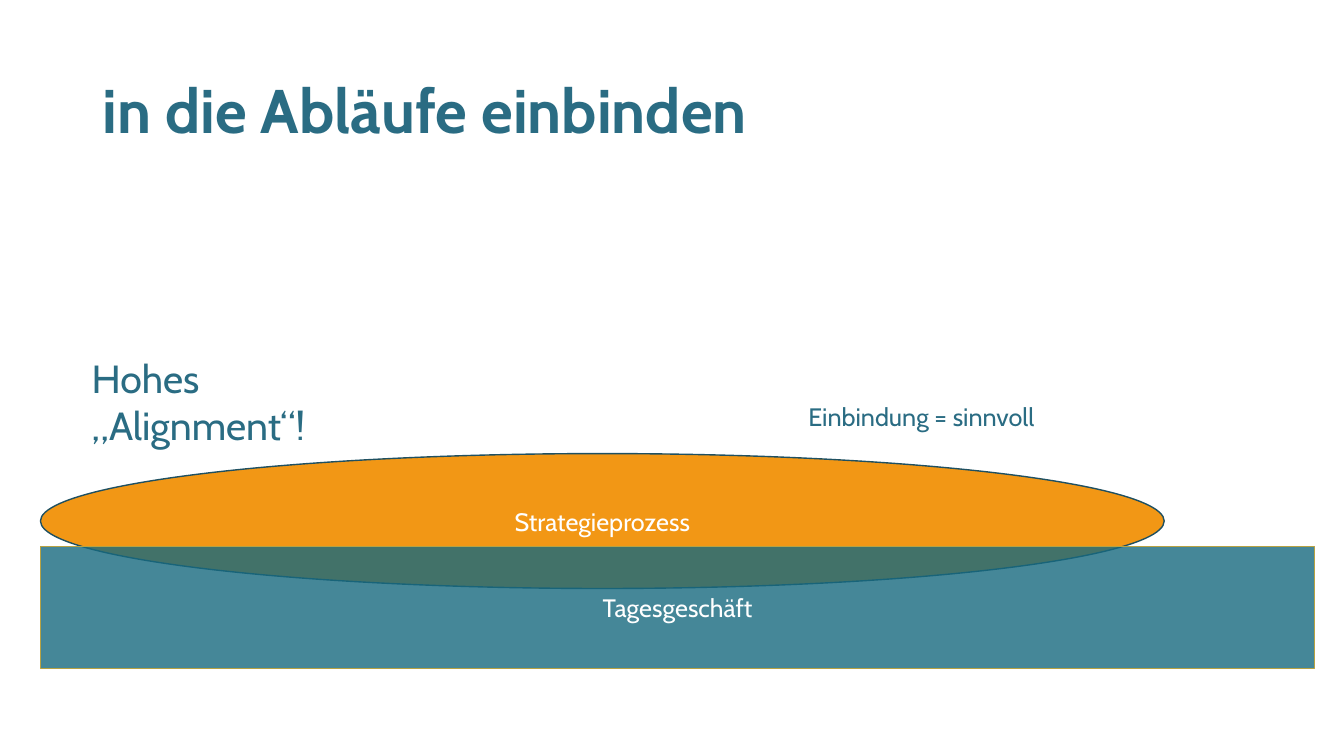
"""Build a slide showing the strategy process embedded in daily business."""
from dataclasses import dataclass
from typing import Optional

from lxml.etree import SubElement
from pptx import Presentation
from pptx.dml.color import RGBColor
from pptx.enum.shapes import MSO_SHAPE
from pptx.enum.text import MSO_ANCHOR, PP_ALIGN
from pptx.oxml.ns import qn
from pptx.util import Cm, Pt

TEAL_TEXT = RGBColor(0x2A, 0x6C, 0x83)
TEAL_FILL = RGBColor(0x17, 0x69, 0x7F)
DARK_TEAL = RGBColor(0x1F, 0x50, 0x61)
ORANGE = RGBColor(0xF2, 0x97, 0x15)
GOLD = RGBColor(0xB7, 0xA2, 0x43)
WHITE = RGBColor(0xFF, 0xFF, 0xFF)
FONT_NAME = "Cabin"


@dataclass(frozen=True)
class Label:
    text: str
    left: float
    top: float
    width: float
    height: float
    size: int
    bold: bool = False
    anchor: MSO_ANCHOR = MSO_ANCHOR.TOP
    line_spacing: float = 1.0


@dataclass(frozen=True)
class Area:
    text: str
    kind: MSO_SHAPE
    left: float
    top: float
    width: float
    height: float
    fill: RGBColor
    line: RGBColor
    opacity: Optional[int] = None


AREAS = [
    Area("Strategieprozess", MSO_SHAPE.OVAL, 1.02, 11.43, 28.32, 3.4, ORANGE, DARK_TEAL),
    Area("Tagesgeschäft", MSO_SHAPE.RECTANGLE, 1.02, 13.77, 32.11, 3.07, TEAL_FILL, GOLD, 80),
]
LABELS = [
    Label("in die Abläufe einbinden", 2.34, 1.02, 29.21, 3.68, 44, True, MSO_ANCHOR.MIDDLE, 0.9),
    Label("Einbindung = sinnvoll", 20.12, 9.98, 7.29, 1.02, 18),
    Label("Hohes „Alignment“!", 2.06, 8.81, 8.56, 1.45, 28),
]


def write_text(box, text: str, color: RGBColor, size: int, bold: bool = False):
    """Write one formatted paragraph into a box and return it."""
    box.text_frame.word_wrap = True
    para = box.text_frame.paragraphs[0]
    span = para.add_run()
    span.text = text
    for name, value in {"name": FONT_NAME, "size": Pt(size), "bold": bold}.items():
        setattr(span.font, name, value)
    span.font.color.rgb = color
    return para


def add_label(page, label: Label) -> None:
    """Add a text box without an outline."""
    box = page.shapes.add_textbox(
        Cm(label.left), Cm(label.top), Cm(label.width), Cm(label.height))
    para = write_text(box, label.text, TEAL_TEXT, label.size, label.bold)
    para.line_spacing = label.line_spacing
    box.text_frame.vertical_anchor = label.anchor


def add_area(page, area: Area) -> None:
    """Add a filled shape with centred white text."""
    box = page.shapes.add_shape(
        area.kind, Cm(area.left), Cm(area.top), Cm(area.width), Cm(area.height))
    box.shadow.inherit = False
    box.fill.solid()
    box.fill.fore_color.rgb = area.fill
    if area.opacity is not None:
        color = box.fill._xPr.find(qn("a:solidFill"))[0]
        SubElement(color, qn("a:alpha"), val=str(area.opacity * 1000))
    box.line.color.rgb = area.line
    box.line.width = Pt(1)
    para = write_text(box, area.text, WHITE, 18)
    para.alignment = PP_ALIGN.CENTER
    box.text_frame.vertical_anchor = MSO_ANCHOR.MIDDLE


def main() -> None:
    """Draw the slide and save the deck."""
    deck = Presentation()
    deck.slide_width, deck.slide_height = Cm(33.87), Cm(19.05)
    page = deck.slides.add_slide(deck.slide_layouts[6])
    for area in AREAS:
        add_area(page, area)
    for label in LABELS:
        add_label(page, label)
    deck.save("out.pptx")


if __name__ == "__main__":
    main()
